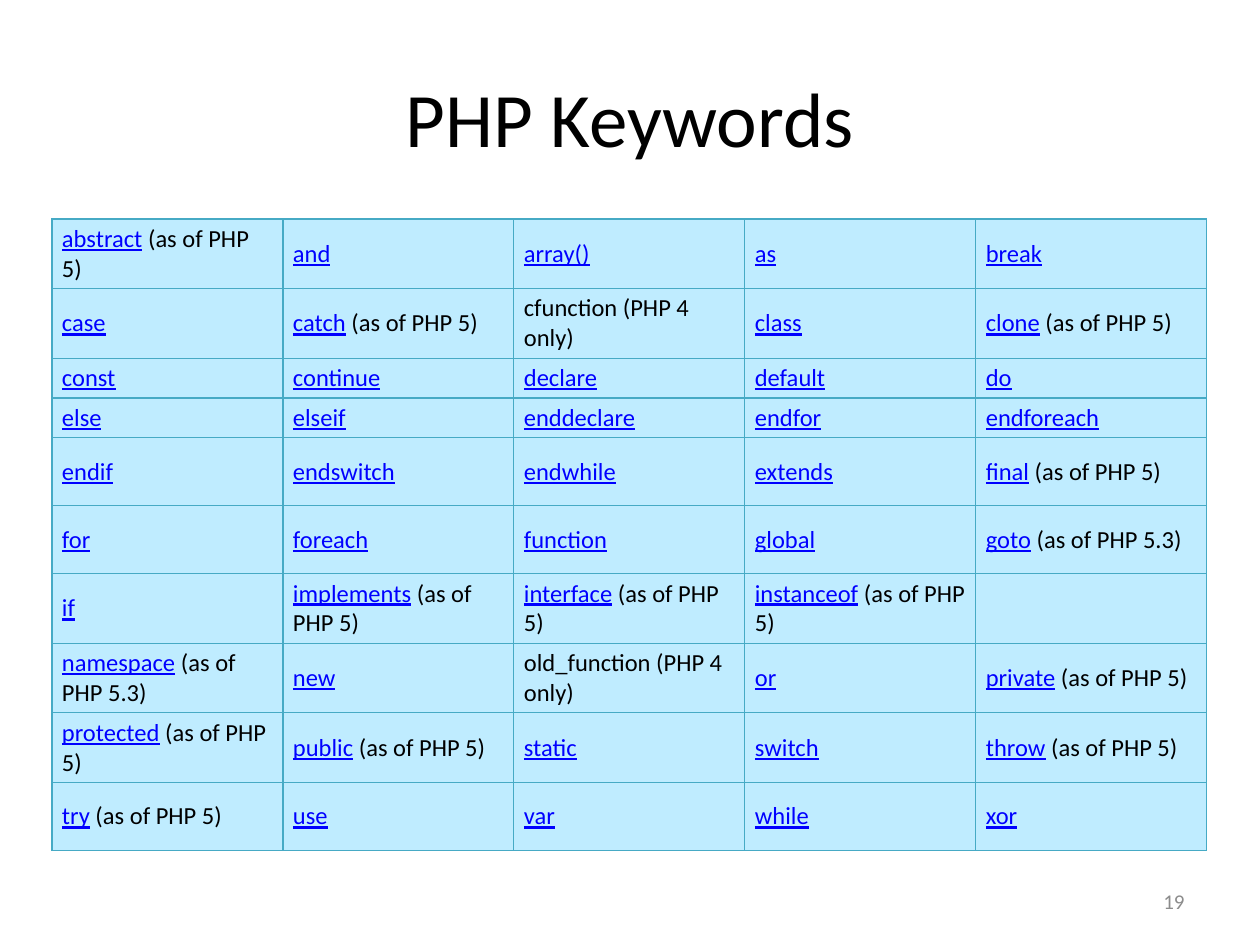
import dataclasses

import pptx
import pptx.dml.color
import pptx.enum.text
import pptx.oxml
import pptx.oxml.ns
import pptx.util

EMU_PER_PX = 914400 / 126
FONT = "Calibri"
BLACK, LINK_BLUE, PAGE_GRAY = "000000", "0000FF", "8C8C8C"
CELL_FILL, BORDER = "BFECFF", "46AAC5"


@dataclasses.dataclass(frozen=True)
class Keyword:
    name: str = ""
    note: str = ""
    linked: bool = True


def since(name: str, version: str = "5") -> Keyword:
    return Keyword(name, f" (as of PHP {version})")


def php4_only(name: str) -> Keyword:
    return Keyword(name, " (PHP 4 only)", linked=False)


def plain(names: str) -> list[Keyword]:
    return [Keyword(name) for name in names.split()]


KEYWORD_ROWS = [
    [since("abstract"), *plain("and array() as break")],
    [Keyword("case"), since("catch"), php4_only("cfunction"), Keyword("class"), since("clone")],
    plain("const continue declare default do"),
    plain("else elseif enddeclare endfor endforeach"),
    [*plain("endif endswitch endwhile extends"), since("final")],
    [*plain("for foreach function global"), since("goto", "5.3")],
    [Keyword("if"), since("implements"), since("interface"), since("instanceof"), Keyword()],
    [since("namespace", "5.3"), Keyword("new"), php4_only("old_function"), Keyword("or"),
     since("private")],
    [since("protected"), since("public"), *plain("static switch"), since("throw")],
    [since("try"), *plain("use var while xor")],
]
COLUMN_WIDTH = 231
TALL_ROW, SHORT_ROW = 68, 39
SHORT_ROWS = (2, 3)


def px(length: int) -> pptx.util.Emu:
    return pptx.util.Emu(round(length * EMU_PER_PX))


def color(value: str) -> pptx.dml.color.RGBColor:
    return pptx.dml.color.RGBColor.from_string(value)


def set_font(font, size: int, value: str) -> None:
    font.name = FONT
    font.size = pptx.util.Pt(size)
    font.color.rgb = color(value)


def place(shape, left: int, top: int, width: int, height: int) -> None:
    shape.left, shape.top = px(left), px(top)
    shape.width, shape.height = px(width), px(height)


def add_borders(cell) -> None:
    properties = cell._tc.get_or_add_tcPr()
    for index, side in enumerate(("lnL", "lnR", "lnT", "lnB")):
        line = pptx.oxml.parse_xml(
            f'<a:{side} {pptx.oxml.ns.nsdecls("a")} w="9525"><a:solidFill>'
            f'<a:srgbClr val="{BORDER}"/></a:solidFill></a:{side}>')
        properties.insert(index, line)


def fill_cell(cell, keyword: Keyword) -> None:
    cell.fill.solid()
    cell.fill.fore_color.rgb = color(CELL_FILL)
    add_borders(cell)
    cell.vertical_anchor = pptx.enum.text.MSO_ANCHOR.MIDDLE
    cell.margin_left = cell.margin_right = px(10)
    cell.margin_top = cell.margin_bottom = px(5)
    paragraph = cell.text_frame.paragraphs[0]
    set_font(paragraph.font, 14, BLACK)
    if not keyword.linked:
        paragraph.add_run().text = keyword.name + keyword.note
        return
    if keyword.name:
        run = paragraph.add_run()
        run.text = keyword.name
        run.font.underline = True
        run.font.color.rgb = color(LINK_BLUE)
    if keyword.note:
        paragraph.add_run().text = keyword.note


def add_keyword_table(slide, left: int, top: int) -> None:
    heights = [SHORT_ROW if index in SHORT_ROWS else TALL_ROW
               for index in range(len(KEYWORD_ROWS))]
    columns = len(KEYWORD_ROWS[0])
    table = slide.shapes.add_table(
        len(heights), columns, px(left), px(top),
        px(columns * COLUMN_WIDTH), px(sum(heights))).table
    table.first_row = table.horz_banding = False
    for column in table.columns:
        column.width = px(COLUMN_WIDTH)
    for row, height, keywords in zip(table.rows, heights, KEYWORD_ROWS):
        row.height = px(height)
        for cell, keyword in zip(row.cells, keywords):
            fill_cell(cell, keyword)


def main() -> None:
    presentation = pptx.Presentation()
    presentation.slide_width, presentation.slide_height = px(1260), px(945)
    slide = presentation.slides.add_slide(presentation.slide_layouts[5])

    # Title
    title = slide.shapes.title
    place(title, 63, 38, 1134, 157)
    title.text_frame.text = "PHP Keywords"
    title.text_frame.vertical_anchor = pptx.enum.text.MSO_ANCHOR.MIDDLE
    paragraph = title.text_frame.paragraphs[0]
    paragraph.alignment = pptx.enum.text.PP_ALIGN.CENTER
    set_font(paragraph.font, 44, BLACK)

    # Keyword grid
    add_keyword_table(slide, 52, 219)

    # Page number
    number = slide.shapes.add_textbox(px(903), px(876), px(294), px(50))
    number.text_frame.word_wrap = True
    number.text_frame.vertical_anchor = pptx.enum.text.MSO_ANCHOR.MIDDLE
    paragraph = number.text_frame.paragraphs[0]
    paragraph.text = "19"
    paragraph.alignment = pptx.enum.text.PP_ALIGN.RIGHT
    set_font(paragraph.font, 12, PAGE_GRAY)

    presentation.save("out.pptx")


if __name__ == "__main__":
    main()
